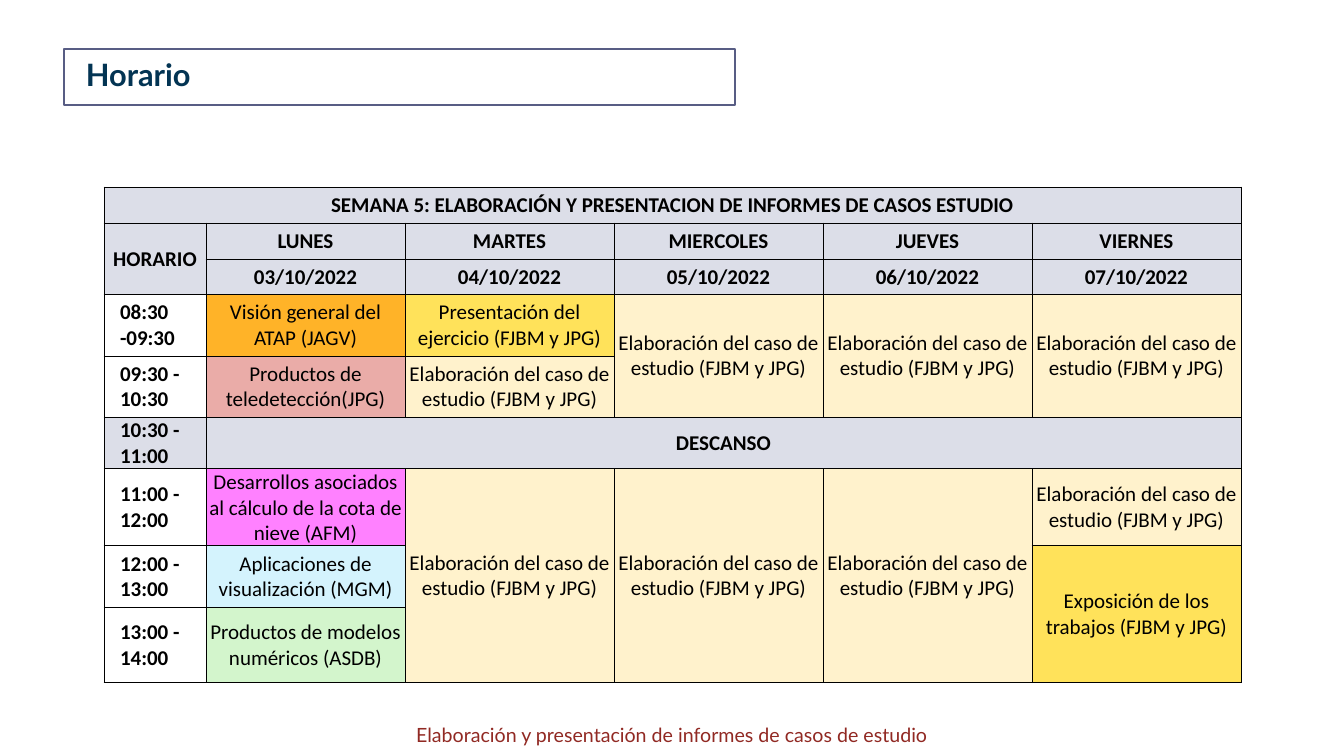
import pptx
import pptx.dml.color
import pptx.enum.text
import pptx.oxml
import pptx.util
from pptx.oxml.ns import nsdecls

PX = 12192000 / 1344
CENTER = pptx.enum.text.PP_ALIGN.CENTER
LEFT = pptx.enum.text.PP_ALIGN.LEFT
MIDDLE = pptx.enum.text.MSO_ANCHOR.MIDDLE


def px(length):
    return pptx.util.Emu(round(length * PX))


def color(value):
    return pptx.dml.color.RGBColor.from_string(value)


deck = pptx.Presentation()
deck.slide_width, deck.slide_height = px(1344), px(756)
slide = deck.slides.add_slide(deck.slide_layouts[5])

heading = slide.shapes.title
heading.left, heading.top, heading.width, heading.height = px(64), px(49), px(671), px(56)
heading._element.spPr.append(pptx.oxml.parse_xml(
    f'<a:prstGeom {nsdecls("a")} prst="roundRect"><a:avLst/></a:prstGeom>'))
heading.fill.solid()
heading.fill.fore_color.rgb = color("FFFFFF")
heading.line.color.rgb = color("585D84")
heading.line.width = pptx.util.Pt(1)
heading.text_frame.text = "Horario"
heading.text_frame.vertical_anchor = MIDDLE
heading.text_frame.margin_left = px(22)

topic = slide.shapes.add_textbox(px(403), px(718), px(538), px(34))
topic.text_frame.word_wrap = True
topic.text_frame.text = "Elaboración y presentación de informes de casos de estudio"

for box, align, size, ink, bold in [
    (heading, LEFT, 22, "033453", True),
    (topic, CENTER, 14, "912923", False),
]:
    paragraph = box.text_frame.paragraphs[0]
    paragraph.alignment = align
    font = paragraph.runs[0].font
    font.name, font.size, font.bold = "Lato", pptx.util.Pt(size), bold
    font.color.rgb = color(ink)
heading.text_frame.paragraphs[0].line_spacing = 0.9

GRAY, CREAM, YELLOW = "DCDEE8", "FFF2CC", "FFE25A"
case_study = ("Elaboración del caso de estudio (FJBM y JPG)", CREAM)
days = ["LUNES", "MARTES", "MIERCOLES", "JUEVES", "VIERNES"]
dates = [f"{day:02}/10/2022" for day in range(3, 8)]
agenda = [
    [("SEMANA 5: ELABORACIÓN Y PRESENTACION DE INFORMES DE CASOS ESTUDIO", GRAY)] + [None] * 5,
    [(label, GRAY) for label in ["HORARIO"] + days],
    [None] + [(date, GRAY) for date in dates],
    [("08:30 -09:30", None), ("Visión general del ATAP (JAGV)", "FFB328"),
     ("Presentación del ejercicio (FJBM y JPG)", YELLOW)] + [case_study] * 3,
    [("09:30 - 10:30", None), ("Productos de teledetección(JPG)", "EAACA8"),
     case_study, None, None, None],
    [("10:30 - 11:00", GRAY), ("DESCANSO", GRAY)] + [None] * 4,
    [("11:00 - 12:00", None),
     ("Desarrollos asociados al cálculo de la cota de nieve (AFM)", "FF81FF")] + [case_study] * 4,
    [("12:00 - 13:00", None), ("Aplicaciones de visualización (MGM)", "D4F3FD"),
     None, None, None, ("Exposición de los trabajos (FJBM y JPG)", YELLOW)],
    [("13:00 - 14:00", None), ("Productos de modelos numéricos (ASDB)", "D3F5CC")] + [None] * 4,
]
column_widths = [102, 199, 209, 209, 209, 209]
row_heights = [36, 36, 35, 62, 61, 51, 77, 62, 75]

schedule = slide.shapes.add_table(
    len(row_heights), len(column_widths), px(104), px(187),
    px(sum(column_widths)), px(sum(row_heights))).table
schedule.first_row = schedule.horz_banding = False
for column, width in zip(schedule.columns, column_widths):
    column.width = px(width)
for row, height in zip(schedule.rows, row_heights):
    row.height = px(height)

for r, entries in enumerate(agenda):
    for c, entry in enumerate(entries):
        cell = schedule.cell(r, c)
        for side in ("lnL", "lnR", "lnT", "lnB"):
            cell._tc.get_or_add_tcPr().append(pptx.oxml.parse_xml(
                f'<a:{side} {nsdecls("a")} w="6350"><a:solidFill>'
                f'<a:srgbClr val="000000"/></a:solidFill></a:{side}>'))
        label, fill = entry or ("", None)
        if fill:
            cell.fill.solid()
            cell.fill.fore_color.rgb = color(fill)
        else:
            cell.fill.background()
        if not label:
            continue
        is_time = c == 0 and r > 2
        cell.text_frame.text = label
        cell.vertical_anchor = MIDDLE
        cell.margin_left = cell.margin_right = px(16 if is_time else 1)
        cell.margin_top, cell.margin_bottom = px(1), 0
        paragraph = cell.text_frame.paragraphs[0]
        paragraph.alignment = LEFT if is_time else CENTER
        font = paragraph.runs[0].font
        font.name, font.size = "Calibri", pptx.util.Pt(15)
        font.bold = is_time or fill == GRAY
        font.color.rgb = color("000000")

merges = [(0, 0, 0, 5), (1, 0, 2, 0), (5, 1, 5, 5), (7, 5, 8, 5)]
merges += [(3, c, 4, c) for c in (3, 4, 5)]
merges += [(6, c, 8, c) for c in (2, 3, 4)]
for top, left, bottom, right in merges:
    schedule.cell(top, left).merge(schedule.cell(bottom, right))

deck.save("out.pptx")
